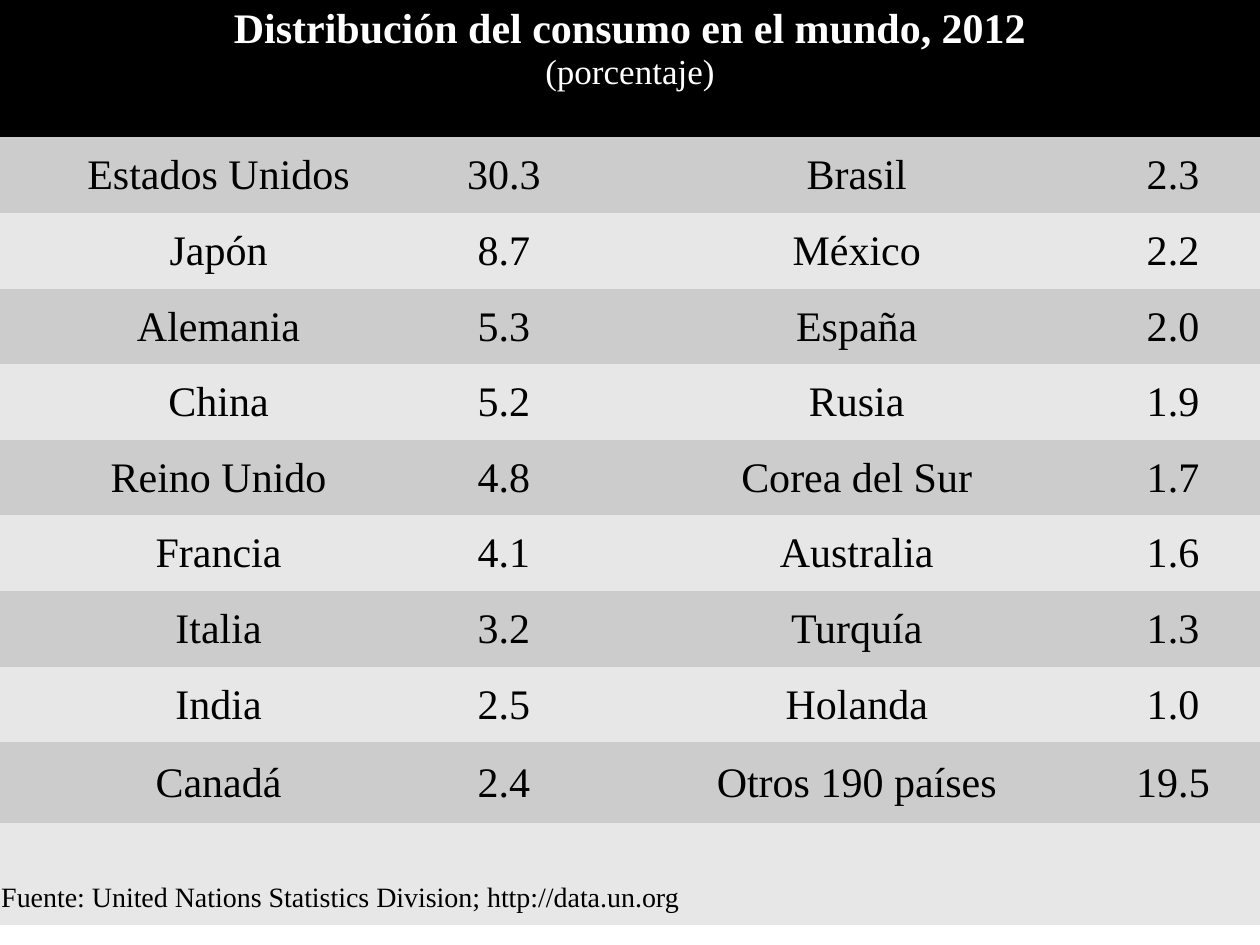
from pptx import Presentation
from pptx.dml.color import RGBColor
from pptx.enum.text import MSO_ANCHOR, PP_ALIGN
from pptx.oxml.ns import qn
from pptx.util import Inches, Pt

CENTER, LEFT = PP_ALIGN.CENTER, PP_ALIGN.LEFT
TOP, MIDDLE, BOTTOM = MSO_ANCHOR.TOP, MSO_ANCHOR.MIDDLE, MSO_ANCHOR.BOTTOM

FONT = "Times New Roman"
COLORS = {"header": "000000", "header_text": "FFFFFF", "text": "000000",
          "dark": "CCCCCC", "light": "E7E7E7"}
NO_STYLE = "{2D5ABB26-0587-4C30-8999-92F81FD0307C}"

COLUMN_WIDTHS = [3.47, 1.06, 0.45, 3.64, 1.38]
ROW_HEIGHTS = [1.09] + [0.6] * 8 + [0.64, 0.81]
SHARES = [
    ("Estados Unidos", "30.3", "", "Brasil", "2.3"),
    ("Japón", "8.7", "", "México", "2.2"),
    ("Alemania", "5.3", "", "España", "2.0"),
    ("China", "5.2", "", "Rusia", "1.9"),
    ("Reino Unido", "4.8", "", "Corea del Sur", "1.7"),
    ("Francia", "4.1", "", "Australia", "1.6"),
    ("Italia", "3.2", "", "Turquía", "1.3"),
    ("India", "2.5", "", "Holanda", "1.0"),
    ("Canadá", "2.4", "", "Otros 190 países", "19.5"),
]


def fill_cell(cell, color):
    cell.fill.solid()
    cell.fill.fore_color.rgb = RGBColor.from_string(COLORS[color])


def set_margins(cell, bottom=0):
    cell.margin_left = cell.margin_right = cell.margin_top = Inches(0.01)
    cell.margin_bottom = Inches(bottom)


def write_cell(cell, lines, color="text", align=CENTER, anchor=MIDDLE):
    """Each line is (text, size, bold) and becomes one paragraph."""
    cell.vertical_anchor = anchor
    frame = cell.text_frame
    for index, (text, size, bold) in enumerate(lines):
        para = frame.add_paragraph() if index else frame.paragraphs[0]
        para.alignment = align
        span = para.add_run()
        span.text = text
        span.font.name = FONT
        span.font.size = Pt(size)
        span.font.bold = bold
        span.font.color.rgb = RGBColor.from_string(COLORS[color])


def add_share_table(page, left, top, width, height):
    frame = page.shapes.add_table(len(ROW_HEIGHTS), len(COLUMN_WIDTHS),
                                  left, top, width, height)
    table = frame.table
    properties = frame._element.graphic.graphicData.tbl.tblPr
    properties.find(qn("a:tableStyleId")).text = NO_STYLE
    table.first_row = table.horz_banding = False
    for column, column_width in zip(table.columns, COLUMN_WIDTHS):
        column.width = Inches(column_width)
    for row, row_height in zip(table.rows, ROW_HEIGHTS):
        row.height = Inches(row_height)

    # Title and source rows span the full width
    last_row, last_column = len(ROW_HEIGHTS) - 1, len(COLUMN_WIDTHS) - 1
    for row in (0, last_row):
        table.cell(row, 0).merge(table.cell(row, last_column))
    title = table.cell(0, 0)
    fill_cell(title, "header")
    write_cell(title, [("Distribución del consumo en el mundo, 2012", 24, True),
                       ("(porcentaje)", 20, False)], "header_text", anchor=TOP)

    # Country shares in alternating bands
    for row, values in enumerate(SHARES, start=1):
        for column, value in enumerate(values):
            cell = table.cell(row, column)
            fill_cell(cell, "dark" if row % 2 else "light")
            set_margins(cell)
            if value:
                write_cell(cell, [(value, 24, False)])

    # Source
    source = table.cell(last_row, 0)
    fill_cell(source, "light")
    set_margins(source, bottom=0.09)
    write_cell(source, [("Fuente: United Nations Statistics Division; "
                         "http://data.un.org", 16, False)],
               align=LEFT, anchor=BOTTOM)


def main():
    deck = Presentation()
    deck.slide_width, deck.slide_height = Inches(10), Inches(7.5)
    page = deck.slides.add_slide(deck.slide_layouts[6])
    add_share_table(page, Inches(0), Inches(0), Inches(10), Inches(7.37))
    deck.save("out.pptx")


if __name__ == "__main__":
    main()
